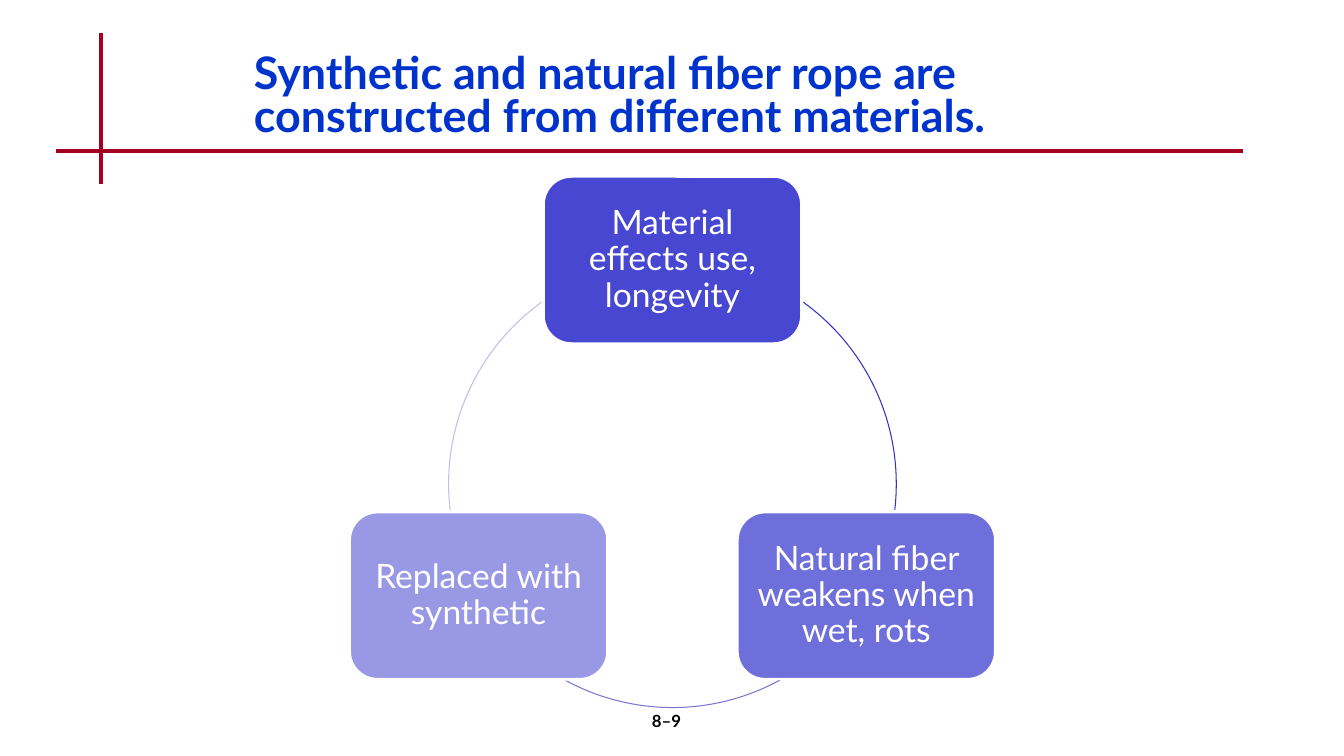
from math import cos, radians, sin

from lxml import etree
from pptx import Presentation
from pptx.dml.color import RGBColor
from pptx.enum.shapes import MSO_CONNECTOR as Conn, MSO_SHAPE as Shape
from pptx.enum.text import MSO_ANCHOR as Anchor, PP_ALIGN as Align
from pptx.oxml.ns import qn
from pptx.util import Inches, Pt

COLORS = {"rule": "A50021", "title": "0033CC", "node": "3333CC",
          "white": "FFFFFF", "black": "000000"}
# Text, place on the ring in degrees, opacity in percent
NODES = [("Material effects use, longevity", -90, 90),
         ("Natural fiber weakens when wet, rots", 30, 70),
         ("Replaced with synthetic", 150, 50)]
# Start and end in degrees, line colour
ARCS = [(305.8, 6.7, "3131C3"), (61.4, 118.6, "7777D5"),
        (173.3, 234.2, "BFBFE7")]


def rgb(name):
    return RGBColor.from_string(COLORS.get(name, name))


def write(frame, text, color, font, para):
    frame.word_wrap = True
    line = frame.paragraphs[0]
    line.text = text
    for key, value in para.items():
        setattr(line, key, value)
    for key, value in {"name": "Lato", **font}.items():
        setattr(line.font, key, value)
    line.font.color.rgb = rgb(color)


def add_text(slide, box, *style):
    write(slide.shapes.add_textbox(*map(Inches, box)).text_frame, *style)


def add_rule(slide, ends):
    rule = slide.shapes.add_connector(Conn.STRAIGHT, *map(Inches, ends))
    rule.line.color.rgb = rgb("rule")
    rule.line.width = Pt(3)
    etree.SubElement(rule._element.spPr, qn("a:effectLst"))


def add_header(slide, box):
    left, top, width, height = box
    # Crossed rules
    add_rule(slide, (left + 0.44, top, left + 0.44, top + height))
    add_rule(slide, (left, top + 1.17, left + width, top + 1.17))
    # Title
    add_text(slide, (left + 1.86, top + 0.17, 8.5, 1),
             "Synthetic and natural fiber rope are constructed from "
             "different materials.", "title",
             {"size": Pt(32), "bold": True}, {"line_spacing": 0.8})


def add_node(slide, x, y, text, alpha):
    wide, high = 2.56, 1.66
    node = slide.shapes.add_shape(
        Shape.ROUNDED_RECTANGLE,
        *map(Inches, (x - wide / 2, y - high / 2, wide, high)))
    node.shadow.inherit = False
    node.fill.solid()
    node.fill.fore_color.rgb = rgb("node")
    tint = node._element.spPr.find(qn("a:solidFill"))[0]
    etree.SubElement(tint, qn("a:alpha"), val=str(alpha * 1000))
    node.line.color.rgb = rgb("white")
    node.line.width = Pt(2)
    frame = node.text_frame
    frame.vertical_anchor = Anchor.MIDDLE
    for side in ("left", "top", "right", "bottom"):
        setattr(frame, "margin_" + side, Inches(0.1))
    write(frame, text, "white", {"size": Pt(24)},
          {"alignment": Align.CENTER, "line_spacing": 0.9})


def add_arc(slide, box, start, end, color):
    arc = slide.shapes.add_shape(Shape.ARC, *map(Inches, box))
    arc.shadow.inherit = False
    arc.fill.background()
    arc.line.color.rgb = rgb(color)
    arc.line.width = Pt(0.75)
    # Arc angles are stored in 60000ths of a degree, scaled by 100000
    for i, angle in enumerate((start, end)):
        arc.adjustments[i] = angle * 0.6


def add_cycle(slide, box):
    left, top, size, _ = box
    radius = size / 2
    for (text, angle, alpha), arc in zip(NODES, ARCS):
        turn = radians(angle)
        add_node(slide, left + radius * (1 + cos(turn)),
                 top + radius * (1 + sin(turn)), text, alpha)
        add_arc(slide, box, *arc)


def add_footer(slide, box):
    add_text(slide, box, "8–9", "black", {"size": Pt(12), "bold": True},
             {"alignment": Align.CENTER})


def main():
    deck = Presentation()
    deck.slide_width, deck.slide_height = Inches(13.33), Inches(7.5)
    slide = deck.slides.add_slide(deck.slide_layouts[6])
    add_header(slide, (0.56, 0.33, 11.77, 1.5))
    add_cycle(slide, (4.45, 2.58, 4.44, 4.44))
    add_footer(slide, (5.22, 7, 2.78, 0.5))
    deck.save("out.pptx")


if __name__ == "__main__":
    main()
